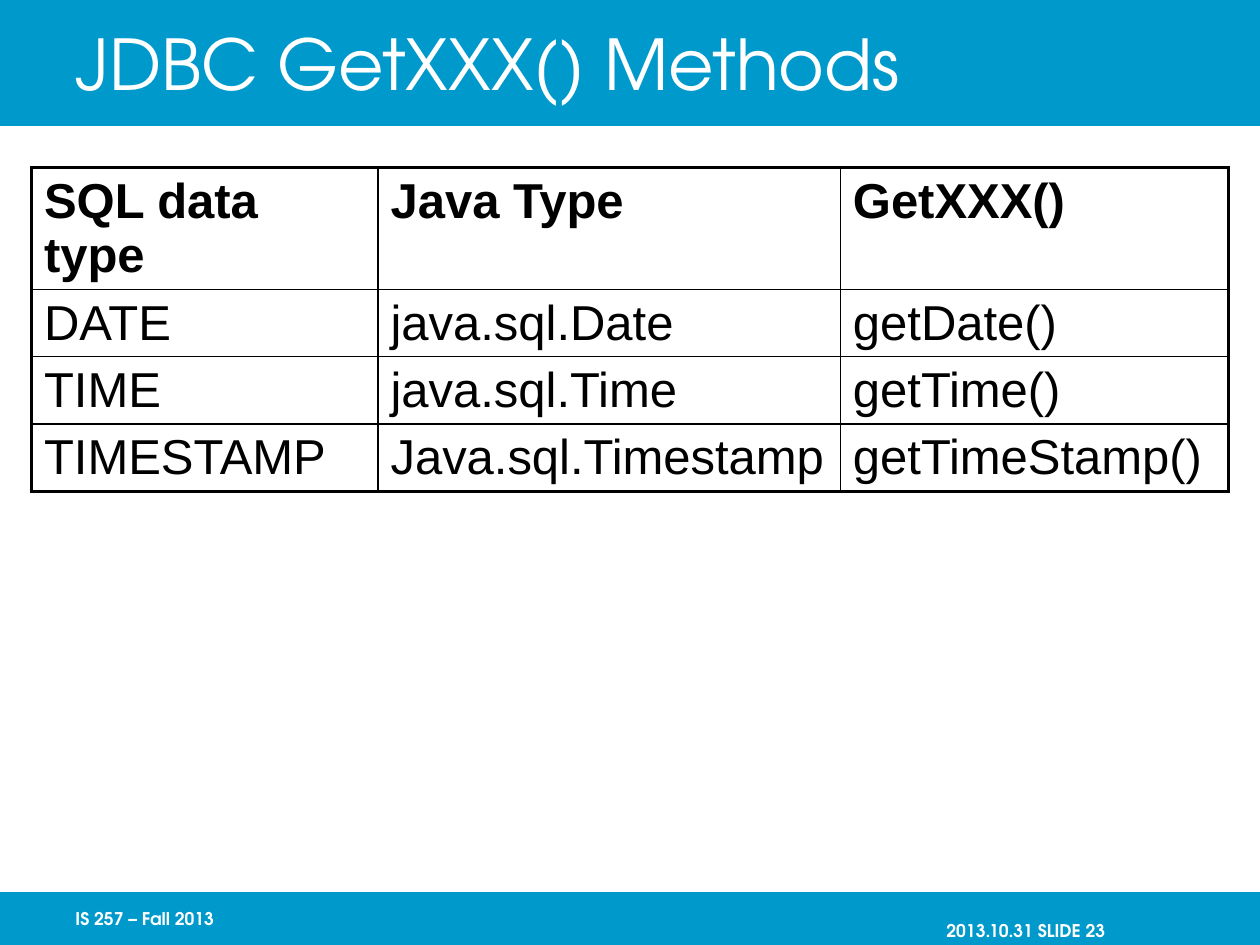
from dataclasses import dataclass

from lxml.etree import SubElement
from pptx import Presentation
from pptx.dml.color import RGBColor
from pptx.enum.shapes import MSO_SHAPE as Shape
from pptx.enum.text import MSO_ANCHOR as Anchor, PP_ALIGN as Align
from pptx.oxml.ns import qn
from pptx.util import Inches, Pt


@dataclass(frozen=True)
class Theme:
    band: str = "0099CC"
    light: str = "FFFFFF"
    dark: str = "000000"
    heading_font: str = "TeX Gyre Adventor"
    table_font: str = "Arial"
    title_size: float = 40
    table_size: float = 28
    footer_size: float = 10
    outer_border: float = 2.25
    inner_border: float = 1


THEME = Theme()
METHODS = [
    ("SQL data type", "Java Type", "GetXXX()"),
    ("DATE", "java.sql.Date", "getDate()"),
    ("TIME", "java.sql.Time", "getTime()"),
    ("TIMESTAMP", "Java.sql.Timestamp", "getTimeStamp()"),
]
COLUMN_WIDTHS = (2.75, 3.67, 3.08)
ROW_HEIGHT = 0.46
FOOTER_TOP, FOOTER_HEIGHT = 7.08, 0.42


def write(frame, text, *, size, font, color, bold=False, align=Align.LEFT):
    paragraph = frame.paragraphs[0]
    paragraph.alignment = align
    run = paragraph.add_run()
    run.text = text
    run.font.size = Pt(size)
    run.font.name = font
    run.font.bold = bold
    run.font.color.rgb = RGBColor.from_string(color)


def add_band(slide, top, height):
    band = slide.shapes.add_shape(
        Shape.RECTANGLE, 0, Inches(top), Inches(10), Inches(height))
    band.shadow.inherit = False
    band.fill.solid()
    band.fill.fore_color.rgb = RGBColor.from_string(THEME.band)
    band.line.fill.background()


def place_title(slide, text):
    title = slide.shapes.title
    title.left, title.top = Inches(0.5), Inches(0)
    title.width, title.height = Inches(8.5), Inches(1)
    title.text_frame.vertical_anchor = Anchor.MIDDLE
    write(title.text_frame, text, size=THEME.title_size,
          font=THEME.heading_font, color=THEME.light)
    # Bring the title in front of the band.
    title.element.getparent().append(title.element)


def add_footer(slide, text, left, *, align=Align.LEFT, anchor=Anchor.MIDDLE,
               right_inset=0.0, bottom_inset=0.05):
    box = slide.shapes.add_textbox(
        Inches(left), Inches(FOOTER_TOP), Inches(2.08), Inches(FOOTER_HEIGHT))
    frame = box.text_frame
    frame.word_wrap = True
    frame.vertical_anchor = anchor
    frame.margin_left = Inches(0 if right_inset else 0.1)
    frame.margin_right = Inches(right_inset)
    frame.margin_bottom = Inches(bottom_inset)
    write(frame, text, size=THEME.footer_size, font=THEME.heading_font,
          color=THEME.light, bold=True, align=align)


def set_borders(cell, outer_sides):
    """Draw all four cell edges, heavier on those at the table's outside."""
    properties = cell._tc.get_or_add_tcPr()
    for side in "LRTB":
        width = THEME.outer_border if side in outer_sides else THEME.inner_border
        line = SubElement(properties, qn(f"a:ln{side}"), w=str(Pt(width)))
        fill = SubElement(line, qn("a:solidFill"))
        SubElement(fill, qn("a:srgbClr"), val=THEME.dark)


def add_methods_table(slide):
    last_row, last_column = len(METHODS) - 1, len(COLUMN_WIDTHS) - 1
    table = slide.shapes.add_table(
        len(METHODS), len(COLUMN_WIDTHS), Inches(0.25), Inches(1.33),
        Inches(sum(COLUMN_WIDTHS)), Inches(ROW_HEIGHT * len(METHODS))).table
    table.first_row = table.horz_banding = False
    for column, width in zip(table.columns, COLUMN_WIDTHS):
        column.width = Inches(width)
    for r, entries in enumerate(METHODS):
        table.rows[r].height = Inches(ROW_HEIGHT)
        for c, entry in enumerate(entries):
            cell = table.cell(r, c)
            edges = {"L": c == 0, "R": c == last_column,
                     "T": r == 0, "B": r == last_row}
            set_borders(cell, [side for side, outer in edges.items() if outer])
            cell.fill.background()
            write(cell.text_frame, entry, size=THEME.table_size,
                  font=THEME.table_font, color=THEME.dark, bold=r == 0)


def main():
    deck = Presentation()
    deck.slide_width, deck.slide_height = Inches(10), Inches(7.5)
    slide = deck.slides.add_slide(deck.slide_layouts[5])
    add_band(slide, 0, 1)
    add_band(slide, FOOTER_TOP, FOOTER_HEIGHT)
    add_footer(slide, "2013.10.31 SLIDE 23", 7.42, align=Align.RIGHT,
               anchor=Anchor.BOTTOM, right_inset=0.73, bottom_inset=0.03)
    add_footer(slide, "IS 257 – Fall 2013", 0.5)
    place_title(slide, "JDBC GetXXX() Methods")
    add_methods_table(slide)
    deck.save("out.pptx")


if __name__ == "__main__":
    main()
